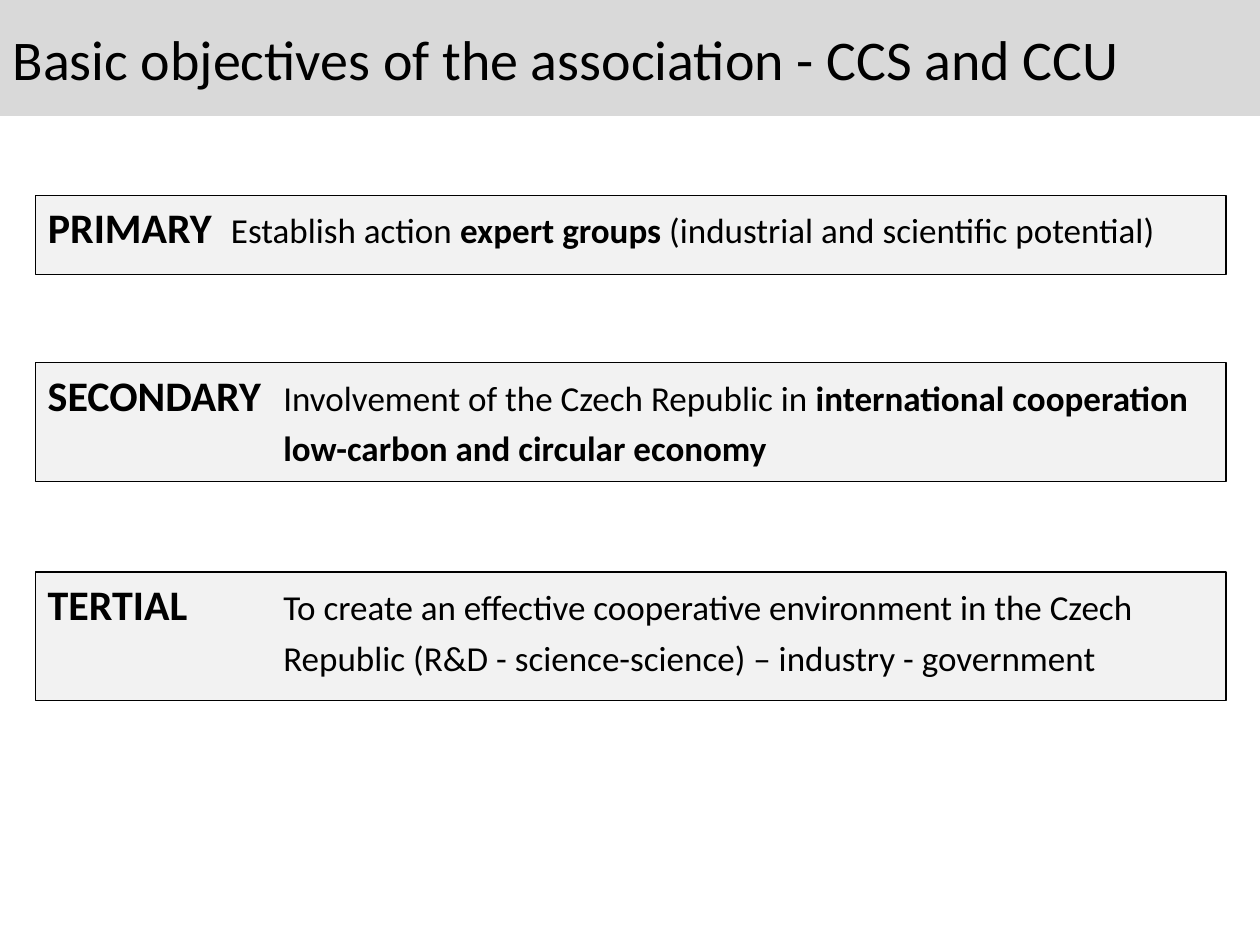
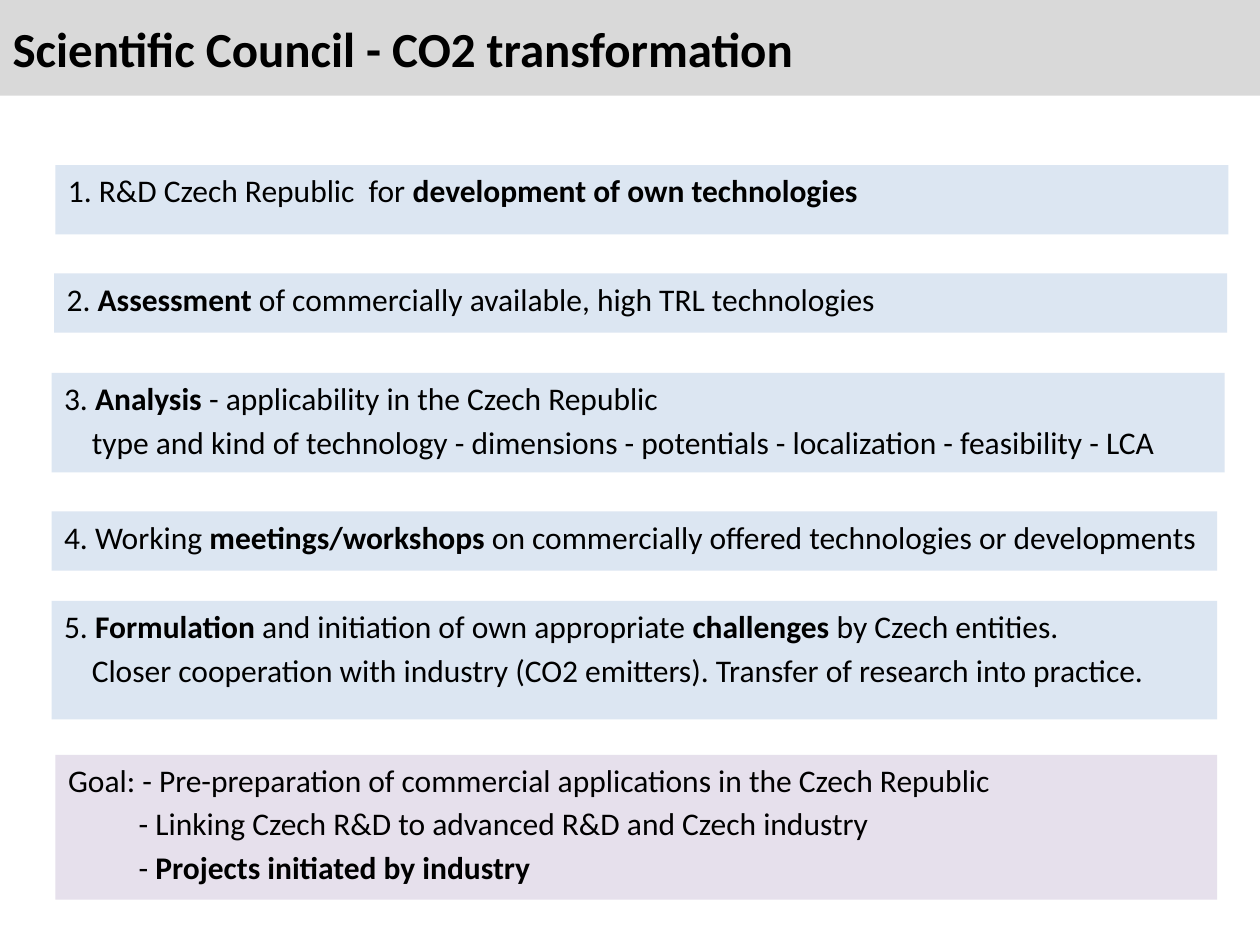
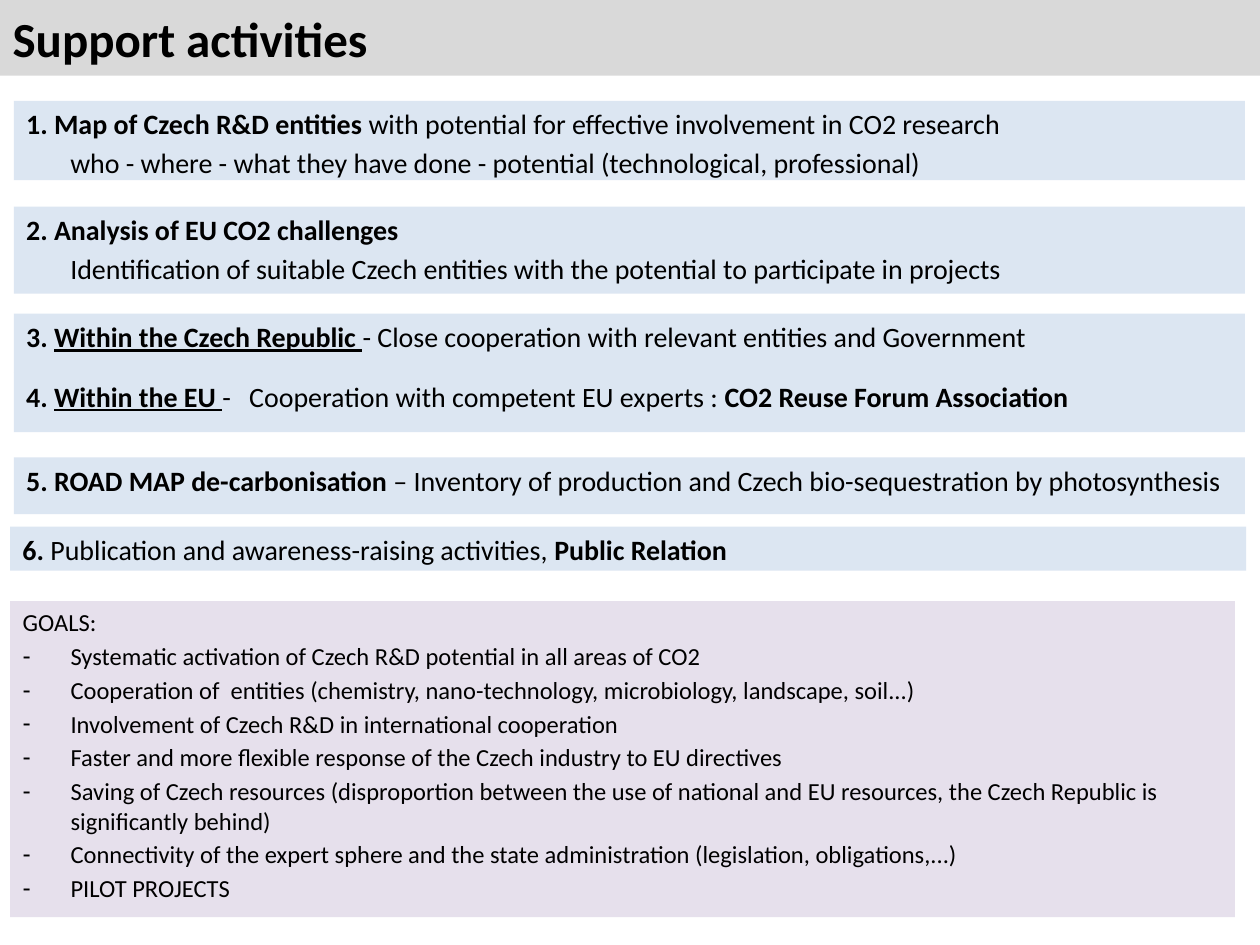
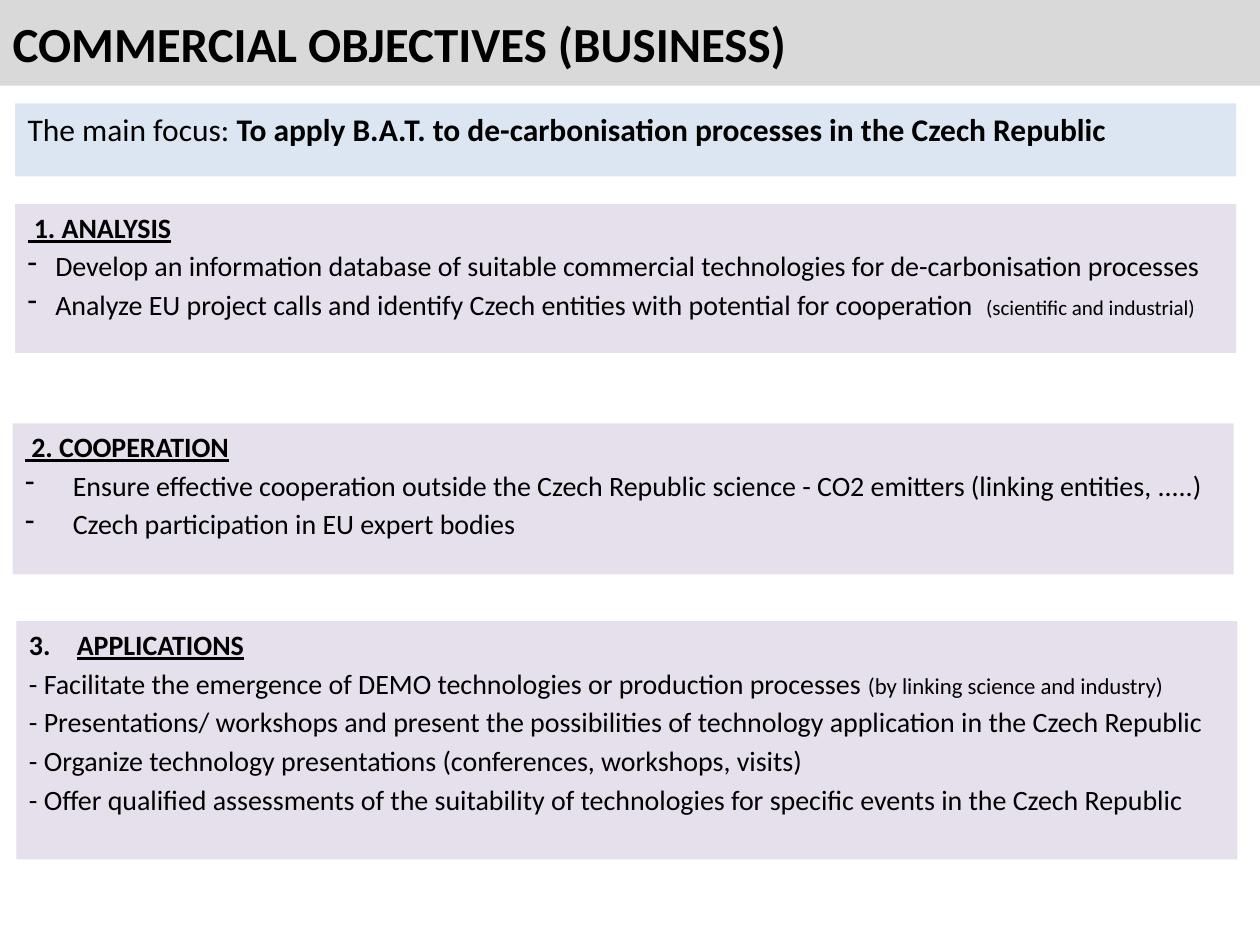
import dataclasses

import lxml.etree
import pptx
import pptx.dml.color
import pptx.enum.shapes
import pptx.enum.text
import pptx.oxml.ns
import pptx.util

Inches = pptx.util.Inches
Pt = pptx.util.Pt


@dataclasses.dataclass(frozen=True)
class Theme:
    font: str = "Calibri"
    ink: str = "000000"
    band: str = "D9D9D9"
    grey: str = "F2F2F2"
    blue: str = "DCE6F2"
    violet: str = "E6E0EC"
    hero: int = 32
    title: int = 28
    head: int = 24
    large: int = 20
    text: int = 18
    small: int = 16
    goals: int = 14
    note: int = 13
    fine: int = 12
    spacing: float = 0.18
    bullet_indent: float = 0.38


THEME = Theme()


@dataclasses.dataclass(frozen=True)
class Line:
    spans: tuple
    left: float = 0
    hang: float = 0
    bullet: tuple = ("buNone", {})


def line(*spans, **layout):
    return Line(spans, **layout)


def bullet(*spans, indent=THEME.bullet_indent):
    return Line(spans, indent, indent, ("buChar", {"char": "-"}))


def numbered(start, *spans):
    indent = THEME.bullet_indent
    mark = ("buAutoNum", {"type": "arabicPeriod", "startAt": str(start)})
    return Line(spans, indent, indent, mark)


def bold(text, **style):
    return text, {"bold": True, **style}


def sized(text, size):
    return text, {"size": size}


def head(text):
    return bold(text, size=THEME.head)


def under(text):
    return bold(text, underline=True)


def apply(target, values):
    for name, value in values.items():
        setattr(target, name, value)


class Deck:
    def __init__(self, theme):
        self.theme = theme
        self.deck = pptx.Presentation()
        apply(self.deck, {"slide_width": Inches(10), "slide_height": Inches(7.5)})
        self.page = None

    def color(self, value):
        return pptx.dml.color.RGBColor.from_string(value)

    def start(self, title, height, size=THEME.title, strong=True):
        self.page = self.deck.slides.add_slide(self.deck.slide_layouts[1])
        box = self.page.shapes.title
        self.frame(box, (0, 0, 10, height), self.theme.band, "MIDDLE")
        self.add_lines(box, [line((title, {"bold": strong}))], size)

    def frame(self, box, place, fill, anchor="TOP"):
        names = ("left", "top", "width", "height")
        apply(box, dict(zip(names, map(Inches, place))))
        box.fill.solid()
        box.fill.fore_color.rgb = self.color(fill)
        box.line.fill.background()
        apply(box.text_frame, {
            "word_wrap": True,
            "auto_size": pptx.enum.text.MSO_AUTO_SIZE.NONE,
            "vertical_anchor": pptx.enum.text.MSO_ANCHOR[anchor],
        })

    def panel(self, place, fill, size, *lines, lead=None, outline=False, body=False):
        if body:
            box = self.page.placeholders[1]
        else:
            box = self.page.shapes.add_shape(
                pptx.enum.shapes.MSO_SHAPE.RECTANGLE, *map(Inches, place))
            box.shadow.inherit = False
        self.frame(box, place, fill)
        if outline:
            box.line.color.rgb = self.color(self.theme.ink)
            box.line.width = Pt(0.75)
        spacing = round(self.theme.spacing * (lead or size), 1)
        self.add_lines(box, lines, size, spacing)

    def add_lines(self, box, lines, size, spacing=0):
        words = box.text_frame
        for number, item in enumerate(lines):
            para = words.add_paragraph() if number else words.paragraphs[0]
            apply(para, {"alignment": pptx.enum.text.PP_ALIGN.LEFT,
                         "space_before": Pt(spacing)})
            self.indent(para, item)
            for span in item.spans:
                text, style = span if isinstance(span, tuple) else (span, {})
                self.span(para, text, {"size": size, **style})

    def indent(self, para, item):
        properties = para._p.get_or_add_pPr()
        properties.set("marL", str(Inches(item.left)))
        properties.set("indent", str(-Inches(item.hang)))
        tag, values = item.bullet
        lxml.etree.SubElement(properties, pptx.oxml.ns.qn("a:" + tag), values)

    def span(self, para, text, style):
        span = para.add_run()
        span.text = text
        values = {"name": self.theme.font, "bold": False, "underline": False, **style}
        apply(span.font, {**values, "size": Pt(values["size"])})
        span.font.color.rgb = self.color(self.theme.ink)

    def save(self):
        self.deck.save("out.pptx")


def objectives(deck):
    deck.start("Basic objectives of the association - CCS and CCU", 0.92,
               THEME.hero, strong=False)
    column = 1.87
    panels = [
        (1.55, 0.63, [
            line(head("PRIMARY  "), "Establish action ", bold("expert groups "),
                 "(industrial and scientific potential)")]),
        (2.88, 0.94, [
            line(head("SECONDARY\t"), "Involvement of the Czech Republic in ",
                 bold("international cooperation"), left=column, hang=column),
            line(bold("low-carbon and circular economy"), left=column)]),
        (4.54, 1.02, [
            line(head("TERTIAL\t"),
                 "To create an effective cooperative environment in the Czech",
                 left=column, hang=column),
            line("Republic (R&D - science-science) – industry - government",
                 left=column)]),
    ]
    for number, (top, height, lines) in enumerate(panels):
        deck.panel((0.28, top, 9.45, height), THEME.grey, THEME.large, *lines,
                   lead=THEME.head, outline=True, body=number == 0)


def council(deck):
    deck.start("Scientific Council - CO2 transformation", 0.76)
    step = 0.22
    tasks = [
        ((0.44, 1.31, 9.31, 0.55), [
            line("1. R&D Czech Republic  for ", bold("development of own technologies"))]),
        ((0.43, 2.17, 9.31, 0.47), [
            line("2. ", bold("Assessment"),
                 " of commercially available, high TRL technologies")]),
        ((0.41, 2.96, 9.31, 0.79), [
            line("3. ", bold("Analysis"), " - applicability in the Czech Republic"),
            line("type and kind of technology - dimensions - potentials - "
                 "localization - feasibility - LCA", left=step)]),
        ((0.41, 4.06, 9.25, 0.47), [
            line("4. Working ", bold("meetings/workshops"),
                 " on commercially offered technologies or developments")]),
        ((0.41, 4.77, 9.25, 0.94), [
            line("5. ", bold("Formulation"), " and initiation of own appropriate ",
                 bold("challenges"), " by Czech entities."),
            line("Closer cooperation with industry (CO2 emitters). "
                 "Transfer of research into practice.", left=step)]),
    ]
    for place, lines in tasks:
        deck.panel(place, THEME.blue, THEME.text, *lines)
    goal = 0.56
    deck.panel(
        (0.44, 5.99, 9.22, 1.15), THEME.violet, THEME.text,
        line("Goal: - Pre-preparation of commercial applications in the Czech Republic"),
        line("- Linking Czech R&D to advanced R&D and Czech industry", left=goal),
        line("- ", bold("Projects initiated by industry"), left=goal),
        body=True)


def support(deck):
    deck.start("Support activities", 0.6)
    step = 0.35
    column = 1.77
    activities = [
        ((0.11, 0.8, 9.77, 0.63), [
            line(bold("1. Map of Czech R&D entities "),
                 "with potential for effective involvement in CO2 research"),
            line("who - where - what they have done - potential "
                 "(technological, professional)", left=step)]),
        ((0.11, 1.64, 9.77, 0.69), [
            line(bold("2. Analysis of EU CO2 challenges")),
            line("Identification of suitable Czech entities with the potential "
                 "to participate in projects", left=step)]),
        ((0.11, 2.49, 9.77, 0.47), [
            line(bold("3. "), under("Within the Czech Republic "),
                 "- Close cooperation with relevant entities and Government")]),
        ((0.11, 2.96, 9.77, 0.47), [
            line(bold("4. "), under("Within the EU "),
                 "-\tCooperation with competent EU experts : ",
                 bold("CO2 Reuse Forum Association"), left=column, hang=column)]),
        ((0.11, 3.63, 9.77, 0.45), [
            line(bold("5. ROAD MAP de-carbonisation "),
                 "– Inventory of production and Czech bio-sequestration by photosynthesis")]),
        ((0.08, 4.18, 9.81, 0.35), [
            line(bold("6. "), "Publication and awareness-raising activities, ",
                 bold("Public Relation"))]),
    ]
    for place, lines in activities:
        deck.panel(place, THEME.blue, THEME.small, *lines)
    goals = [
        "Systematic activation of Czech R&D potential in all areas of CO2",
        "Cooperation of  entities (chemistry, nano-technology, microbiology, "
        "landscape, soil...)",
        "Involvement of Czech R&D in international cooperation",
        "Faster and more flexible response of the Czech industry to EU directives",
        "Saving of Czech resources (disproportion between the use of national and "
        "EU resources, the Czech Republic is significantly behind)",
        "Connectivity of the expert sphere and the state administration "
        "(legislation, obligations,...)",
        "PILOT PROJECTS",
    ]
    deck.panel((0.08, 4.77, 9.72, 2.51), THEME.violet, THEME.goals,
               line("GOALS:"), *map(bullet, goals), body=True)


def business(deck):
    deck.start("COMMERCIAL OBJECTIVES (BUSINESS)", 0.68)
    width = 9.69
    step = 0.22
    deck.panel(
        (0.12, 0.82, width, 0.58), THEME.blue, THEME.text,
        line("The main focus: ",
             bold("To apply B.A.T. to de-carbonisation processes in the Czech Republic")))
    deck.panel(
        (0.12, 1.62, width, 1.18), THEME.violet, THEME.small,
        line(under(" 1. ANALYSIS")),
        bullet("Develop an information database of suitable commercial technologies "
               "for de-carbonisation processes", indent=step),
        bullet("Analyze EU project calls and identify Czech entities with potential "
               "for cooperation  ",
               sized("(scientific and industrial)", THEME.fine), indent=step))
    deck.panel(
        (0.1, 3.36, width, 1.2), THEME.violet, THEME.small,
        line(under(" 2. COOPERATION")),
        bullet("Ensure effective cooperation outside the Czech Republic science - "
               "CO2 emitters (linking entities, .....)"),
        bullet("Czech participation in EU expert bodies"))
    deck.panel(
        (0.13, 4.93, width, 1.89), THEME.violet, THEME.small,
        numbered(3, under("APPLICATIONS")),
        line("- Facilitate the emergence of DEMO technologies or production processes ",
             sized("(by linking science and industry)", THEME.note)),
        line("- Presentations/ workshops and present the possibilities of technology "
             "application in the Czech Republic"),
        line("- Organize technology presentations (conferences, workshops, visits)"),
        line("- Offer qualified assessments of the suitability of technologies for "
             "specific events in the Czech Republic"),
        body=True)


def main():
    deck = Deck(THEME)
    for build in (objectives, council, support, business):
        build(deck)
    deck.save()


if __name__ == "__main__":
    main()
